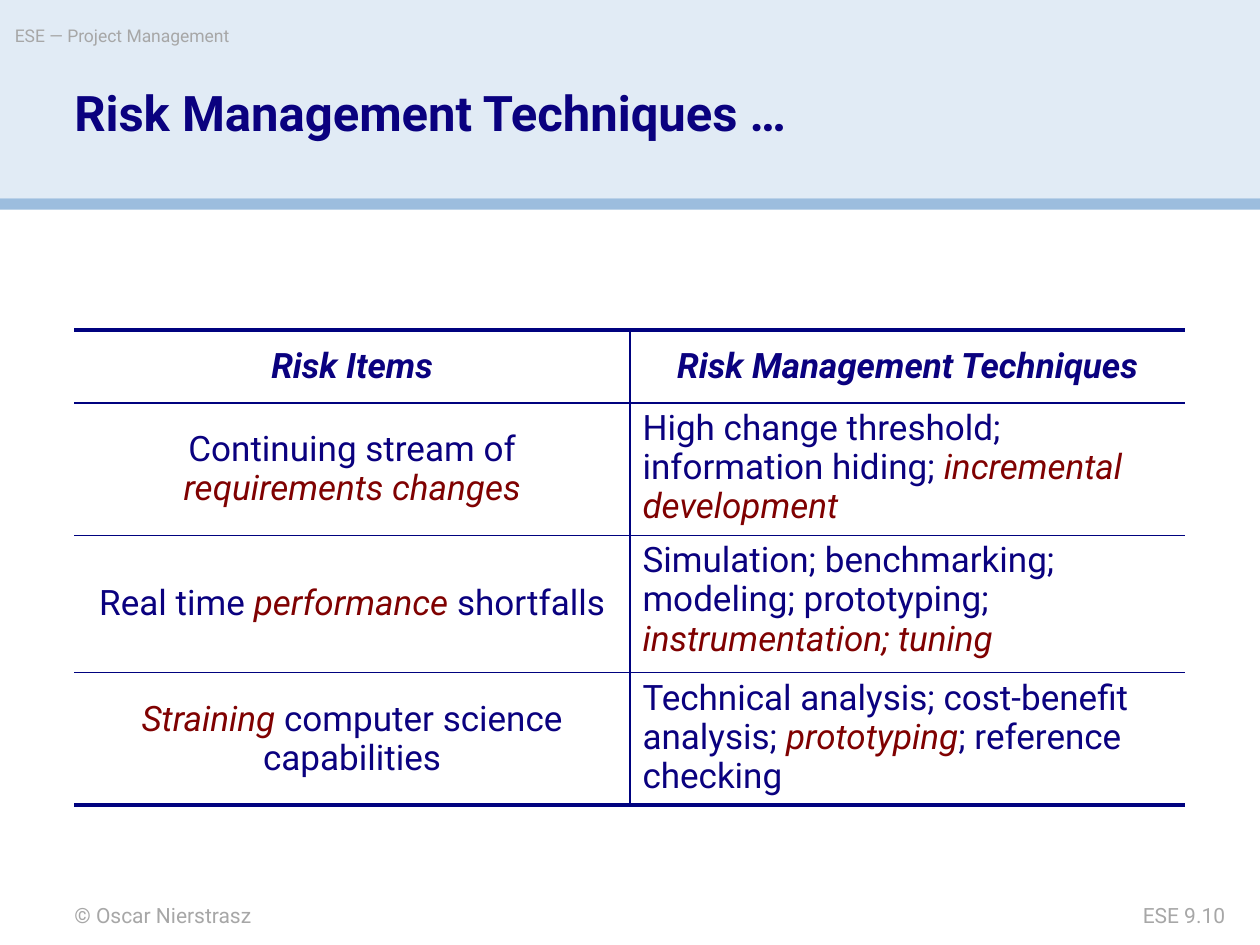
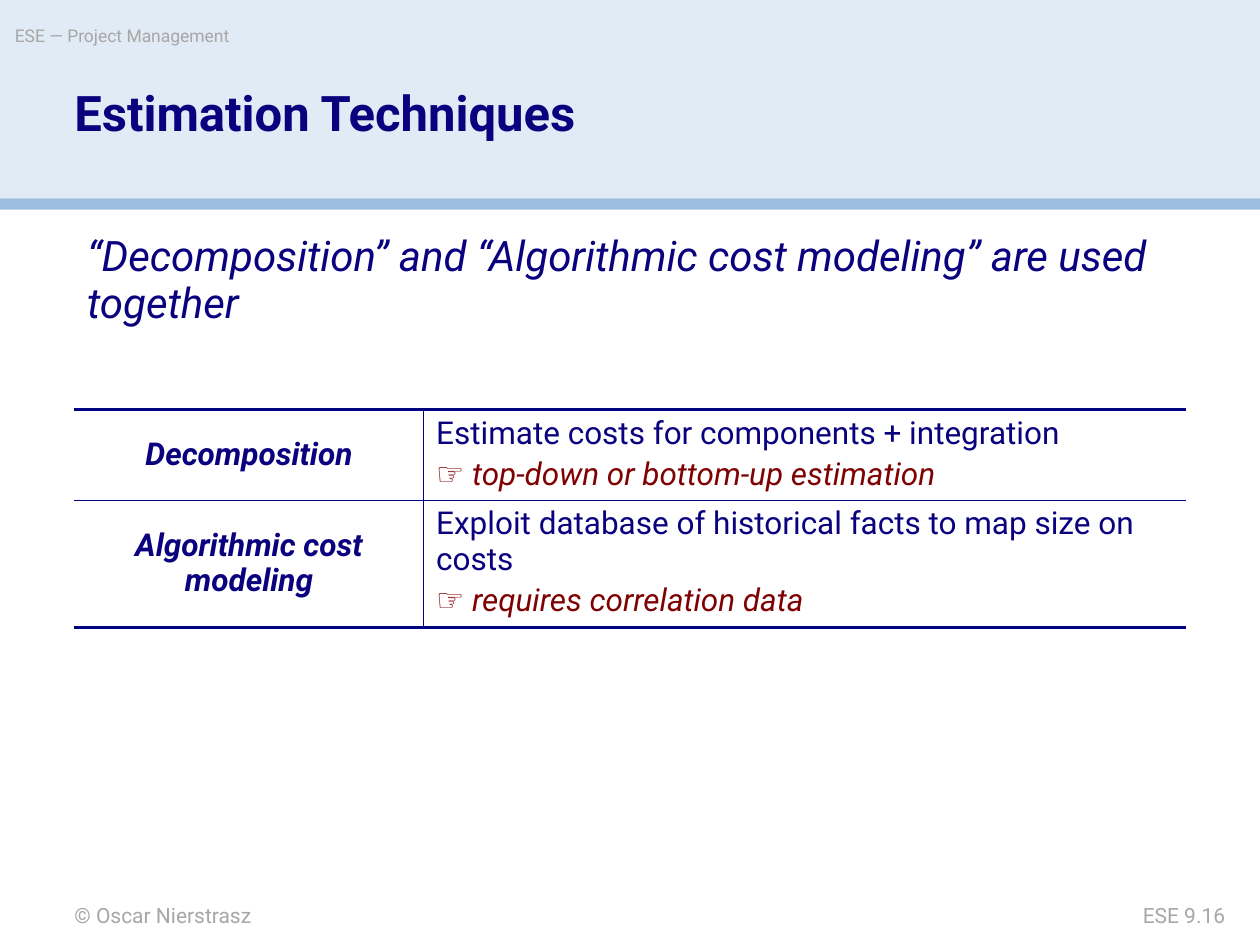
"""Build two project management slides that share a title band, footer and table style."""
from dataclasses import dataclass
from typing import Optional

import lxml.etree
import pptx
import pptx.dml.color
import pptx.enum.shapes
import pptx.enum.text
import pptx.oxml.ns
import pptx.util

Cm, Pt = pptx.util.Cm, pptx.util.Pt
RGBColor = pptx.dml.color.RGBColor
ALIGN = pptx.enum.text.PP_ALIGN
ANCHOR = pptx.enum.text.MSO_ANCHOR

NAVY = RGBColor(0x0A, 0x01, 0x7F)
RULE = RGBColor(0x00, 0x02, 0x7F)
RED = RGBColor(0x7F, 0x01, 0x01)
GREY = RGBColor(0xA7, 0xA7, 0xA7)
PALE = RGBColor(0xE1, 0xEB, 0xF5)
BLUE = RGBColor(0x9C, 0xBD, 0xDE)
FONT = "Roboto"
LEFT = 1.5
THIN, THICK = 1, 2.25


@dataclass
class Band:
    top: float
    height: float
    color: RGBColor


@dataclass
class Label:
    text: str
    left: float
    top: float
    width: float
    height: float
    size: float
    color: RGBColor = GREY
    bold: bool = False
    align: ALIGN = ALIGN.LEFT
    spacing: float = 1.0


@dataclass
class Entry:
    text: str
    size: float
    heading: bool = False
    centered: bool = False


@dataclass
class Grid:
    top: float
    cols: list[float]
    heights: list[float]
    rows: list[tuple[Entry, Entry]]
    intro: Optional[Entry] = None


@dataclass
class Page:
    title: str
    number: str
    grid: Grid


BANDS = [Band(0, 4, PALE), Band(4, 0.23, BLUE)]


def put_text(tf, text: str, *, size: float, color: RGBColor = NAVY, bold: bool = False,
             italic: bool = False, align: ALIGN = ALIGN.LEFT, spacing: float = 0.95) -> None:
    """Write one paragraph per line, with the parts between asterisks in red italics."""
    for i, line in enumerate(text.split("\n")):
        p = tf.add_paragraph() if i else tf.paragraphs[0]
        p.alignment = align
        p.line_spacing = spacing
        if i:
            p.space_before = Pt(0.2 * size)
        for j, part in enumerate(line.split("*")):
            if part:
                accent = j % 2 == 1
                r = p.add_run()
                r.text = part
                r.font.name = FONT
                r.font.size = Pt(size)
                r.font.bold = bold
                r.font.italic = italic or accent
                r.font.color.rgb = RED if accent else color


def add_band(s, band: Band) -> None:
    """Draw a filled band across the slide."""
    sp = s.shapes.add_shape(pptx.enum.shapes.MSO_SHAPE.RECTANGLE,
                            0, Cm(band.top), Cm(25.4), Cm(band.height))
    sp.shadow.inherit = False
    sp.fill.solid()
    sp.fill.fore_color.rgb = band.color
    sp.line.fill.background()


def add_label(s, label: Label) -> None:
    """Add a text box without margins."""
    sp = s.shapes.add_textbox(Cm(label.left), Cm(label.top), Cm(label.width), Cm(label.height))
    tf = sp.text_frame
    tf.word_wrap = True
    tf.margin_left = tf.margin_right = tf.margin_top = tf.margin_bottom = 0
    put_text(tf, label.text, size=label.size, color=label.color, bold=label.bold,
             align=label.align, spacing=label.spacing)


def set_borders(cell, left: float, right: float, top: float, bottom: float) -> None:
    """Clear the cell's fill and set its border widths in points, zero meaning none."""
    qn = pptx.oxml.ns.qn
    cell.fill.background()
    tc_pr = cell._tc.get_or_add_tcPr()
    widths = {"a:lnL": left, "a:lnR": right, "a:lnT": top, "a:lnB": bottom}
    for i, (tag, width) in enumerate(widths.items()):
        ln = lxml.etree.Element(qn(tag), w=str(Pt(width)))
        if width:
            fill = lxml.etree.SubElement(ln, qn("a:solidFill"))
            lxml.etree.SubElement(fill, qn("a:srgbClr"), val=str(RULE))
        else:
            lxml.etree.SubElement(ln, qn("a:noFill"))
        tc_pr.insert(i, ln)


def fill_cell(cell, entry: Entry) -> None:
    """Write an entry into a table cell."""
    if entry.centered:
        cell.vertical_anchor = ANCHOR.MIDDLE
    put_text(cell.text_frame, entry.text, size=entry.size,
             bold=entry.heading and entry.centered, italic=entry.heading,
             align=ALIGN.CENTER if entry.centered else ALIGN.LEFT)


def add_grid(s, grid: Grid) -> None:
    """Add a two-column table ruled thick at its ends, below an optional intro row."""
    first = 1 if grid.intro else 0
    last = len(grid.heights) - 1
    table = s.shapes.add_table(last + 1, 2, Cm(LEFT), Cm(grid.top),
                               Cm(sum(grid.cols)), Cm(sum(grid.heights))).table
    table.first_row = table.horz_banding = False
    for col, width in zip(table.columns, grid.cols):
        col.width = Cm(width)
    for row, height in zip(table.rows, grid.heights):
        row.height = Cm(height)
    if grid.intro:
        for c in range(2):
            set_borders(table.cell(0, c), 0, 0, 0, THICK)
        table.cell(0, 0).merge(table.cell(0, 1))
        fill_cell(table.cell(0, 0), grid.intro)
    for i, entries in enumerate(grid.rows, first):
        for c, entry in enumerate(entries):
            cell = table.cell(i, c)
            set_borders(cell, THIN if c else 0, 0 if c else THIN,
                        THICK if i == first else THIN, THICK if i == last else THIN)
            fill_cell(cell, entry)


def add_page(prs, page: Page) -> None:
    """Add a slide with bands, labels and its table."""
    s = prs.slides.add_slide(prs.slide_layouts[6])
    for band in BANDS:
        add_band(s, band)
    for label in (
        Label("© Oscar Nierstrasz", LEFT, 18.19, 10.6, 0.5, 12),
        Label("ESE — Project Management", 0.3, 0.5, 15, 0.7, 10),
        Label(page.number, 20.95, 18.2, 3.75, 0.5, 12, align=ALIGN.RIGHT),
        Label(page.title, LEFT, 1.8, 18.4, 2.25, 28, NAVY, True, spacing=0.9),
    ):
        add_label(s, label)
    add_grid(s, page.grid)


def entry_rows(size: float, pairs: list[tuple[str, str]],
               headings: bool = False) -> list[tuple[Entry, Entry]]:
    """Pair centred left entries with left-aligned right entries."""
    return [(Entry(a, size, headings, True), Entry(b, size)) for a, b in pairs]


RISKS = Grid(
    6.65, [11.2, 11.2], [1.47, 2.62, 2.77, 2.62],
    [(Entry("Risk Items", 20, True, True),
      Entry("Risk Management Techniques", 20, True, True))]
    + entry_rows(20, [
        ("Continuing stream of *requirements changes*",
         "High change threshold; information hiding; *incremental development*"),
        ("Real time *performance* shortfalls",
         "Simulation; benchmarking; modeling; prototyping; *instrumentation; tuning*"),
        ("*Straining* computer science capabilities",
         "Technical analysis; cost-benefit analysis; *prototyping*; reference checking"),
    ]),
)

ESTIMATION = Grid(
    4.6, [7.04, 15.36], [3.66, 1.81, 2.51],
    entry_rows(18, [
        ("Decomposition",
         "Estimate costs for components + integration\n*☞ top-down or bottom-up estimation*"),
        ("Algorithmic cost modeling",
         "Exploit database of historical facts to map size on costs\n"
         "*☞ requires correlation data*"),
    ], headings=True),
    Entry("“Decomposition” and “Algorithmic cost modeling” are used together", 24, True),
)

PAGES = [
    Page("Risk Management Techniques …", "ESE 9.10", RISKS),
    Page("Estimation Techniques", "ESE 9.16", ESTIMATION),
]


def main() -> None:
    """Build and save the presentation."""
    prs = pptx.Presentation()
    prs.slide_width, prs.slide_height = Cm(25.4), Cm(19.05)
    for page in PAGES:
        add_page(prs, page)
    prs.save("out.pptx")


if __name__ == "__main__":
    main()
